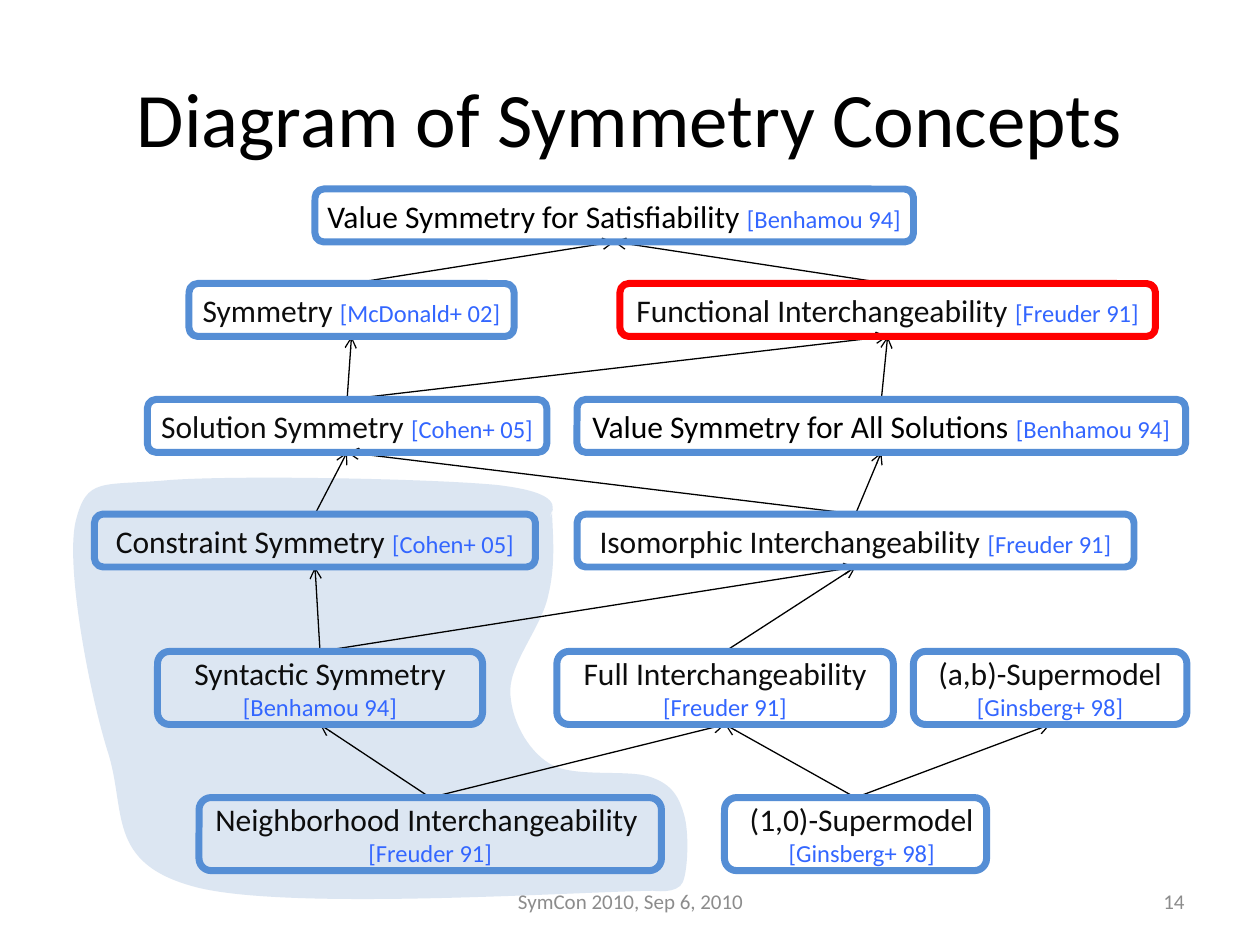
from lxml import etree
from pptx import Presentation
from pptx.dml.color import RGBColor
from pptx.enum.shapes import MSO_CONNECTOR, MSO_SHAPE
from pptx.enum.text import MSO_ANCHOR, PP_ALIGN
from pptx.oxml.ns import qn
from pptx.util import Inches, Pt

ROUNDED = MSO_SHAPE.ROUNDED_RECTANGLE
STRAIGHT = MSO_CONNECTOR.STRAIGHT
MIDDLE = MSO_ANCHOR.MIDDLE
CENTER, RIGHT = PP_ALIGN.CENTER, PP_ALIGN.RIGHT
TOP_SIDE, BOTTOM_SIDE = 0, 2

FONT = "Calibri"
BLACK, INK, CITATION, GREY = "000000", "0D0D0D", "3366FF", "8C8C8C"
BLUE, RED, PALE_BLUE = "558ED5", "FF0000", "DCE6F2"

# Row: top, height, concepts as (key, left, width, name, citation, options)
ROWS = [
    (1.5, 0.42, [
        ("satisfiability", 2.5, 4.75, "Value Symmetry for Satisfiability ", "[Benhamou 94]",
         {"ink": BLACK})]),
    (2.25, 0.42, [
        ("symmetry", 1.5, 2.58, "Symmetry ", "[McDonald+ 02]", {}),
        ("functional", 4.92, 4.25, "Functional Interchangeability ", "[Freuder 91]",
         {"outline": RED})]),
    (3.17, 0.42, [
        ("solution", 1.17, 3.17, "Solution Symmetry ", "[Cohen+ 05]", {}),
        ("all solutions", 4.58, 4.83, "Value Symmetry for All Solutions ", "[Benhamou 94]",
         {"ink": BLACK})]),
    (4.08, 0.42, [
        ("constraint", 0.75, 3.5, "Constraint Symmetry ", "[Cohen+ 05]", {}),
        ("isomorphic", 4.58, 4.42, "Isomorphic Interchangeability ", "[Freuder 91]", {})]),
    (5.17, 0.58, [
        ("syntactic", 1.25, 2.58, "Syntactic Symmetry ", "[Benhamou 94]", {}),
        ("full", 4.42, 2.67, "Full Interchangeability ", "[Freuder 91]", {}),
        ("(a,b)", 7.25, 2.17, "(a,b)-Supermodel", "[Ginsberg+ 98]", {"own_line": True})]),
    (6.33, 0.58, [
        ("neighborhood", 1.58, 3.67, "Neighborhood Interchangeability ", "[Freuder 91]",
         {"own_line": True}),
        ("(1,0)", 5.75, 2.08, "(1,0)-Supermodel", "[Ginsberg+ 98]",
         {"own_line": True, "left_inset": 0.1})]),
]

# Each concept points up to the more general ones
GENERALIZATIONS = {
    "symmetry": ["satisfiability"],
    "functional": ["satisfiability"],
    "solution": ["symmetry", "functional"],
    "all solutions": ["functional"],
    "constraint": ["solution"],
    "isomorphic": ["solution", "all solutions"],
    "syntactic": ["constraint", "isomorphic"],
    "full": ["isomorphic"],
    "neighborhood": ["syntactic", "full"],
    "(1,0)": ["full", "(a,b)"],
}

# Start point, then two control points and an end point for each curve
REGION_START = (4.38, 4.05)
REGION_CURVES = [
    ((4.39, 4.27), (4.41, 4.49), (4.35, 4.73)),
    ((4.3, 4.97), (4.05, 5.26), (4.05, 5.48)),
    ((4.05, 5.7), (4.18, 5.95), (4.36, 6.06)),
    ((4.55, 6.18), (4.99, 6.1), (5.17, 6.17)),
    ((5.34, 6.23), (5.39, 6.33), (5.43, 6.47)),
    ((5.47, 6.61), (5.46, 6.9), (5.42, 7)),
    ((5.38, 7.1), (5.18, 7.07), (5.18, 7.07)),
    ((4.53, 7.08), (2.27, 7.23), (1.55, 7.04)),
    ((0.83, 6.85), (1.01, 6.43), (0.85, 5.95)),
    ((0.7, 5.46), (0.52, 4.49), (0.6, 4.14)),
    ((0.69, 3.78), (0.8, 3.86), (1.35, 3.81)),
    ((1.91, 3.77), (3.45, 3.8), (3.95, 3.85)),
    ((4.45, 3.91), (4.41, 4.02), (4.36, 4.12)),
]


def rgb(color):
    return RGBColor.from_string(color)


def inches(*lengths):
    return [Inches(length) for length in lengths]


def add_run(paragraph, text, size, color):
    run = paragraph.add_run()
    run.text = text
    for name, value in {"name": FONT, "size": Pt(size)}.items():
        setattr(run.font, name, value)
    run.font.color.rgb = rgb(color)


def format_frame(frame, **settings):
    for name, value in {"word_wrap": True, "vertical_anchor": MIDDLE, **settings}.items():
        setattr(frame, name, value)


def add_title(slide, text, box):
    title = slide.shapes.title
    title.left, title.top, title.width, title.height = inches(*box)
    format_frame(title.text_frame)
    paragraph = title.text_frame.paragraphs[0]
    paragraph.alignment = CENTER
    add_run(paragraph, text, 44, BLACK)


def bend_segments(freeform):
    """Turn every three straight segments into one cubic curve."""
    segments = list(freeform._element.iter(qn("a:lnTo")))
    for first in range(0, len(segments), 3):
        curve = etree.Element(qn("a:cubicBezTo"))
        segments[first].addprevious(curve)
        for segment in segments[first:first + 3]:
            curve.append(segment[0])
            segment.getparent().remove(segment)


def add_region(slide):
    outline = slide.shapes.build_freeform(*inches(*REGION_START))
    points = [inches(*point) for curve in REGION_CURVES for point in curve]
    outline.add_line_segments(points, close=False)
    region = outline.convert_to_shape()
    bend_segments(region)
    region.shadow.inherit = False
    region.fill.solid()
    region.fill.fore_color.rgb = rgb(PALE_BLUE)
    region.line.fill.background()
    return region


def add_concept(slide, box, name, citation, ink=INK, outline=BLUE,
                own_line=False, left_inset=0):
    concept = slide.shapes.add_shape(ROUNDED, *inches(*box))
    concept.shadow.inherit = False
    concept.fill.background()
    concept.line.color.rgb = rgb(outline)
    concept.line.width = Pt(4)
    frame = concept.text_frame
    format_frame(frame, margin_left=Inches(left_inset), margin_top=0,
                 margin_right=0, margin_bottom=0)
    name_line = frame.paragraphs[0]
    add_run(name_line, name, 18, ink)
    citation_line = frame.add_paragraph() if own_line else name_line
    add_run(citation_line, citation, 14, CITATION)
    for paragraph in frame.paragraphs:
        paragraph.alignment = CENTER
    return concept


def add_arrow(slide, special, general):
    arrow = slide.shapes.add_connector(STRAIGHT, 0, 0, 0, 0)
    arrow.begin_connect(special, TOP_SIDE)
    arrow.end_connect(general, BOTTOM_SIDE)
    arrow.line.color.rgb = rgb(BLACK)
    arrow.line.width = Pt(0.75)
    etree.SubElement(arrow.line._get_or_add_ln(), qn("a:tailEnd"), type="arrow")
    etree.SubElement(arrow._element.spPr, qn("a:effectLst"))
    return arrow


def add_diagram(slide):
    concepts = {}
    for top, height, row in ROWS:
        for key, left, width, name, citation, options in row:
            concepts[key] = add_concept(
                slide, (left, top, width, height), name, citation, **options)
    backmost = concepts["satisfiability"]._element
    for special, generals in GENERALIZATIONS.items():
        for general in generals:
            arrow = add_arrow(slide, concepts[special], concepts[general])
            backmost.addprevious(arrow._element)  # arrowheads go under the outlines


def add_footer(slide, text, box, alignment):
    footer = slide.shapes.add_textbox(*inches(*box))
    format_frame(footer.text_frame)
    paragraph = footer.text_frame.paragraphs[0]
    paragraph.alignment = alignment
    add_run(paragraph, text, 12, GREY)


def main():
    presentation = Presentation()
    presentation.slide_width, presentation.slide_height = inches(10, 7.5)
    slide = presentation.slides.add_slide(presentation.slide_layouts[5])
    region = add_region(slide)
    slide.shapes.title._element.addprevious(region._element)
    add_title(slide, "Diagram of Symmetry Concepts", (0.5, 0.3, 9, 1.25))
    add_diagram(slide)
    add_footer(slide, "SymCon 2010, Sep 6, 2010", (3.42, 6.95, 3.17, 0.4), CENTER)
    add_footer(slide, "14", (7.17, 6.95, 2.33, 0.4), RIGHT)
    presentation.save("out.pptx")


if __name__ == "__main__":
    main()
